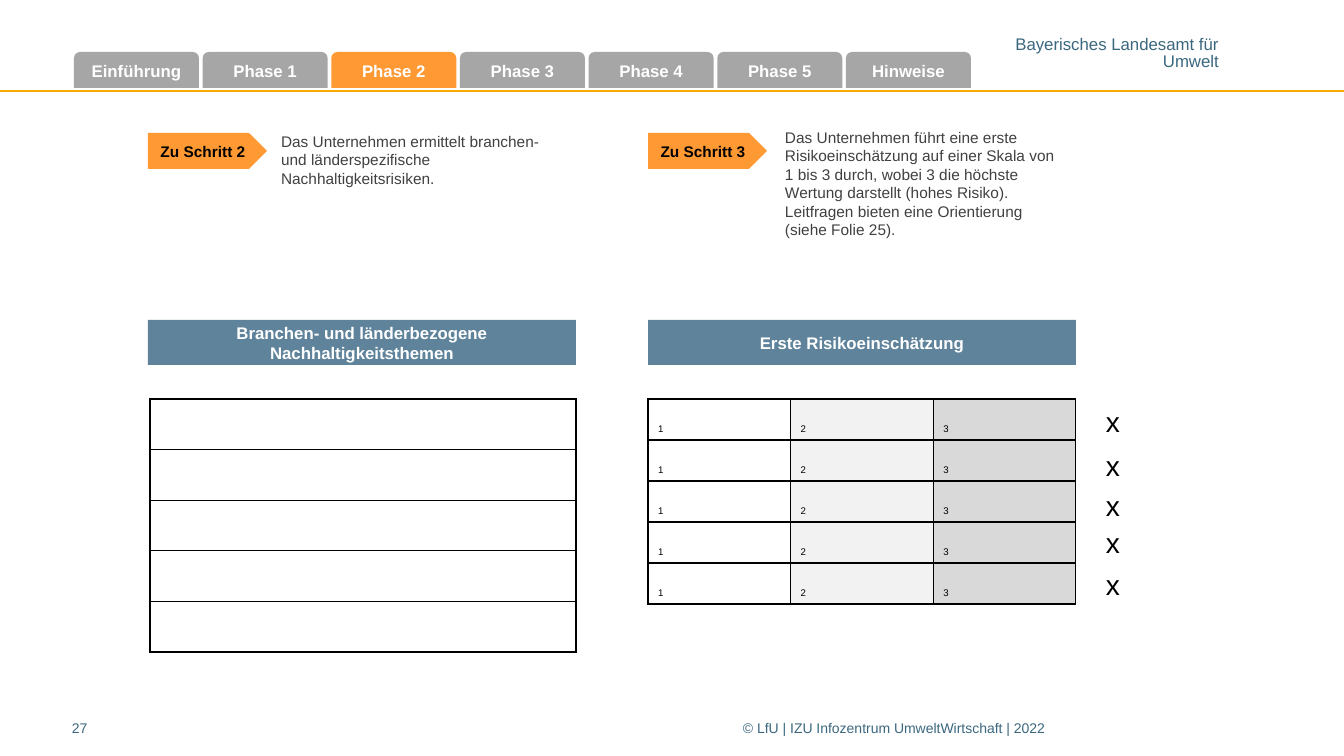
"""Build the slide on steps 2 and 3 of phase 2: sustainability risks and first rating."""
from lxml import etree
from pptx import Presentation
from pptx.dml.color import RGBColor
from pptx.enum.shapes import MSO_CONNECTOR, MSO_SHAPE
from pptx.enum.text import MSO_ANCHOR, PP_ALIGN
from pptx.oxml.ns import qn
from pptx.util import Pt

LEFT, CENTER, RIGHT = PP_ALIGN.LEFT, PP_ALIGN.CENTER, PP_ALIGN.RIGHT
TOP, MIDDLE, BOTTOM = MSO_ANCHOR.TOP, MSO_ANCHOR.MIDDLE, MSO_ANCHOR.BOTTOM
TAB, ARROW, BAR = MSO_SHAPE.ROUND_2_SAME_RECTANGLE, MSO_SHAPE.PENTAGON, MSO_SHAPE.RECTANGLE

PAGE_WIDTH, PAGE_HEIGHT = 1344, 756
ORANGE, GREY, STEEL, TEAL = "FF9933", "A6A6A6", "5E839A", "3B687F"
BLACK, WHITE, DARK, GOLD = "000000", "FFFFFF", "404040", "F9AA00"

TABS = ["Einführung", "Phase 1", "Phase 2", "Phase 3", "Phase 4", "Phase 5", "Hinweise"]
ACTIVE_TAB = "Phase 2"
FIRST_TAB, LAST_TAB = 74, 846
AGENCY = ["Bayerisches Landesamt für", "Umwelt"]
STEPS = [
    ("Zu Schritt 2", 148, (263, 128, 313, 65),
     "Das Unternehmen ermittelt branchen- und länderspezifische Nachhaltigkeitsrisiken.",
     "Branchen- und länderbezogene Nachhaltigkeitsthemen"),
    ("Zu Schritt 3", 648, (767, 124, 309, 102),
     "Das Unternehmen führt eine erste Risikoeinschätzung auf einer Skala von 1 bis 3 durch, "
     "wobei 3 die höchste Wertung darstellt (hohes Risiko). Leitfragen bieten eine "
     "Orientierung (siehe Folie 25).",
     "Erste Risikoeinschätzung"),
]
TOPIC_ROWS = [[("", None)]] * 5
RATING_ROWS = [[("1", None), ("2", "F2F2F2"), ("3", "D9D9D9")]] * 5
MARK_TOPS = [399, 443, 483, 520, 562]
FOOTERS = [("27", (72, 714, 71, 31)),
           ("© LfU | IZU\u00a0Infozentrum UmweltWirtschaft | 2022", (743, 714, 540, 31))]


def px(length):
    return round(length * 914400 / 100.8)


def color(value):
    return RGBColor.from_string(value)


def write(frame, lines, size, ink, bold=False, align=LEFT, anchor=TOP,
          insets=(9, 4, 9, 4), wrap=True, spacing=None, indent=0):
    sides = ("margin_left", "margin_top", "margin_right", "margin_bottom")
    layout = dict(zip(sides, map(px, insets)), word_wrap=wrap, vertical_anchor=anchor)
    for name, value in layout.items():
        setattr(frame, name, value)
    for number, line in enumerate(lines):
        para = frame.paragraphs[0] if number == 0 else frame.add_paragraph()
        para.alignment = align
        if spacing:
            para.line_spacing = spacing
        if indent:
            para._p.get_or_add_pPr().set("marL", str(px(indent)))
        span = para.add_run()
        span.text = line
        for name, value in {"name": "Arial", "size": Pt(size), "bold": bold}.items():
            setattr(span.font, name, value)
        span.font.color.rgb = color(ink)


def add_text(page, place, lines, size, ink, **options):
    box = page.shapes.add_textbox(*map(px, place))
    write(box.text_frame, lines, size, ink, **options)


def add_label(page, kind, place, fill, text, size, ink, insets=(9, 4, 9, 4)):
    shape = page.shapes.add_shape(kind, *map(px, place))
    shape.shadow.inherit = False
    shape.fill.solid()
    shape.fill.fore_color.rgb = color(fill)
    shape.line.fill.background()
    write(shape.text_frame, [text], size, ink, bold=True, align=CENTER,
          anchor=MIDDLE, insets=insets)


def add_borders(cell):
    properties = cell._tc.get_or_add_tcPr()
    for number, side in enumerate(("a:lnL", "a:lnR", "a:lnT", "a:lnB")):
        line = etree.Element(qn(side), w=str(Pt(1)))
        fill = etree.SubElement(line, qn("a:solidFill"))
        etree.SubElement(fill, qn("a:srgbClr"), val=BLACK)
        properties.insert(number, line)


def add_grid(page, place, rows):
    table = page.shapes.add_table(len(rows), len(rows[0]), *map(px, place)).table
    table.first_row = table.horz_banding = False
    for row_number, row in enumerate(rows):
        for column_number, (text, fill) in enumerate(row):
            cell = table.cell(row_number, column_number)
            if fill:
                cell.fill.solid()
                cell.fill.fore_color.rgb = color(fill)
            else:
                cell.fill.background()
            add_borders(cell)
            if text:
                cell.vertical_anchor = BOTTOM
                para = cell.text_frame.paragraphs[0]
                para.alignment = LEFT
                span = para.add_run()
                span.text = text
                span.font.name, span.font.size = "Arial", Pt(12)
                span.font.color.rgb = color(BLACK)
                span._r.get_or_add_rPr().set("baseline", "-25000")


def main():
    deck = Presentation()
    deck.slide_width, deck.slide_height = px(PAGE_WIDTH), px(PAGE_HEIGHT)
    page = deck.slides.add_slide(deck.slide_layouts[6])

    rule = page.shapes.add_connector(MSO_CONNECTOR.STRAIGHT, 0, px(91), px(PAGE_WIDTH), px(91))
    rule.line.color.rgb = color(GOLD)
    rule.line.width = Pt(2)
    etree.SubElement(rule._element.spPr, qn("a:effectLst"))

    add_text(page, (1015, 37, 204, 34), AGENCY, 12, TEAL, align=RIGHT,
             insets=(0, 0, 0, 0), wrap=False, spacing=0.85)
    pitch = (LAST_TAB - FIRST_TAB) / (len(TABS) - 1)
    for number, name in enumerate(TABS):
        add_label(page, TAB, (FIRST_TAB + number * pitch, 52, 125, 36),
                  ORANGE if name == ACTIVE_TAB else GREY, name, 12, WHITE, (4, 5, 4, 5))

    for step, left, place, text, heading in STEPS:
        add_text(page, place, [text], 11, DARK, indent=9)
        add_label(page, ARROW, (left, 133, 119, 36), ORANGE, step, 11, BLACK)
        add_label(page, BAR, (left, 320, 428, 45), STEEL, heading, 12, WHITE)

    add_grid(page, (150, 399, 426, 253), TOPIC_ROWS)
    add_grid(page, (648, 399, 428, 205), RATING_ROWS)
    for top in MARK_TOPS:
        add_text(page, (1096, top, 47, 44), ["x"], 20, BLACK, insets=(10, 5, 10, 5))
    for text, place in FOOTERS:
        add_text(page, place, [text], 10, TEAL, insets=(0, 5, 0, 5))

    deck.save("out.pptx")


if __name__ == "__main__":
    main()
